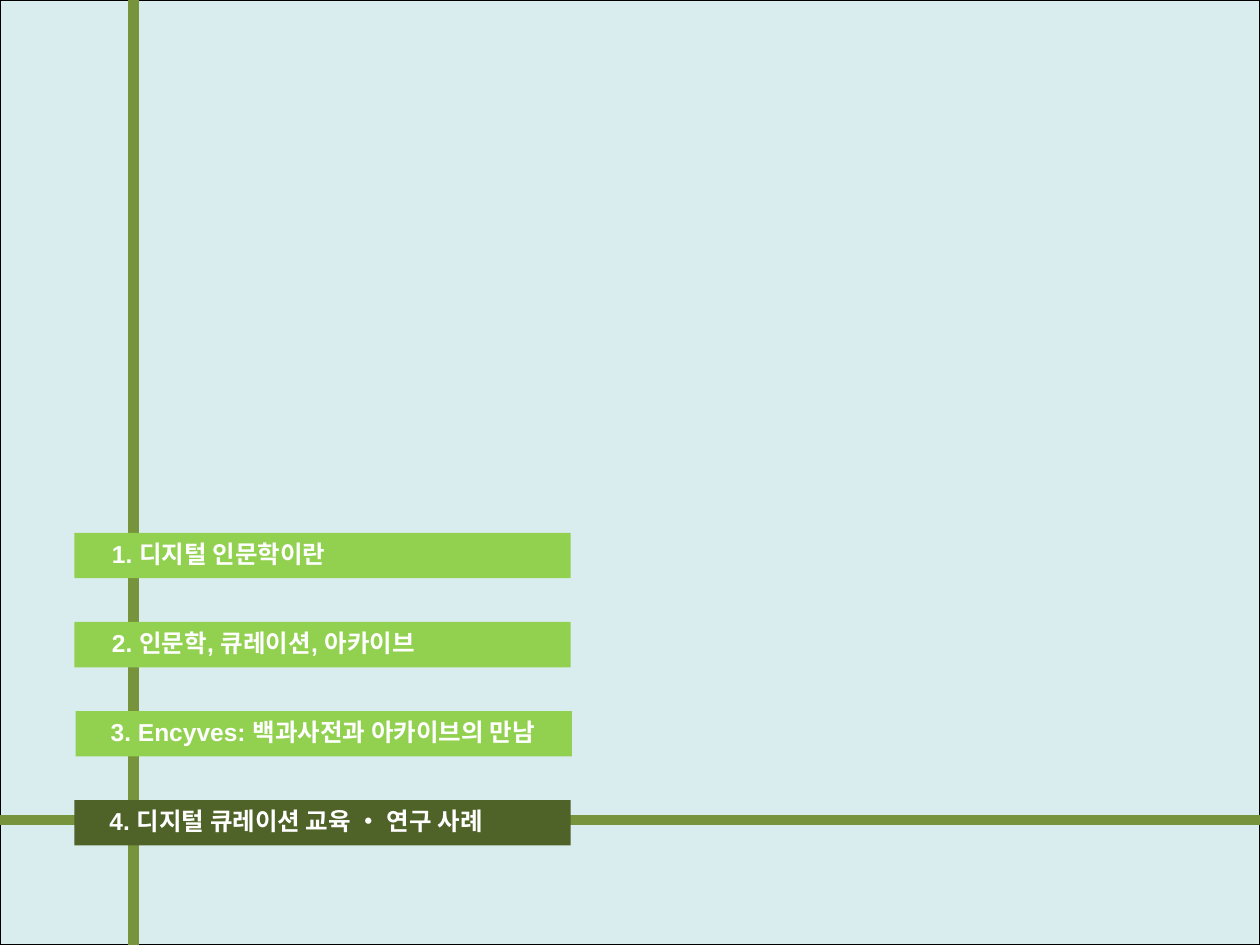
from dataclasses import dataclass

from lxml import etree
from pptx import Presentation
from pptx.dml.color import RGBColor
from pptx.enum.shapes import MSO_CONNECTOR, MSO_SHAPE
from pptx.oxml.ns import qn
from pptx.util import Inches, Pt

RECTANGLE = MSO_SHAPE.RECTANGLE
STRAIGHT = MSO_CONNECTOR.STRAIGHT


@dataclass(frozen=True)
class Theme:
    background: RGBColor = RGBColor.from_string("D9EDEF")
    border: RGBColor = RGBColor.from_string("000000")
    rule: RGBColor = RGBColor.from_string("77933C")
    bar: RGBColor = RGBColor.from_string("92D050")
    active_bar: RGBColor = RGBColor.from_string("4F6228")
    text: RGBColor = RGBColor.from_string("FFFFFF")
    font: str = "Arial"
    text_size: float = 14
    border_width: float = 0.75
    rule_width: float = 6


THEME = Theme()
WIDTH, HEIGHT = 10, 7.5
RULES = [
    (1.06, HEIGHT, 1.06, 0),
    (0, 6.51, WIDTH, 6.51),
]
CHAPTERS = [
    {"title": "1. 디지털 인문학이란", "bar_left": 0.59, "text_left": 0.79, "text_width": 3.35, "fill": THEME.bar},
    {"title": "2. 인문학, 큐레이션, 아카이브", "bar_left": 0.59, "text_left": 0.79, "text_width": 3.19, "fill": THEME.bar},
    {"title": "3. Encyves: 백과사전과 아카이브의 만남", "bar_left": 0.6, "text_left": 0.78, "text_width": 3.91, "fill": THEME.bar},
    {"title": "4. 디지털 큐레이션 교육 • 연구 사례", "bar_left": 0.59, "text_left": 0.77, "text_width": 3.75, "fill": THEME.active_bar},
]
FIRST_TOP, LAST_TOP = 4.23, 6.35
BAR_WIDTH, BAR_HEIGHT, TEXT_HEIGHT = 3.94, 0.36, 0.34
FONT_FORMAT = {"name": THEME.font, "size": Pt(THEME.text_size), "bold": True}


def add_rectangle(page, left, top, width, height, fill):
    box = page.shapes.add_shape(RECTANGLE, Inches(left), Inches(top), Inches(width), Inches(height))
    box.shadow.inherit = False
    box.fill.solid()
    box.fill.fore_color.rgb = fill
    box.line.fill.background()
    return box


def add_background(page):
    box = add_rectangle(page, 0, 0, WIDTH, HEIGHT, THEME.background)
    box.line.color.rgb = THEME.border
    box.line.width = Pt(THEME.border_width)


def add_rule(page, ends):
    rule = page.shapes.add_connector(STRAIGHT, *(Inches(value) for value in ends))
    rule.line.color.rgb = THEME.rule
    rule.line.width = Pt(THEME.rule_width)
    etree.SubElement(rule._element.spPr, qn("a:effectLst"))


def add_chapter(page, chapter, top):
    add_rectangle(page, chapter["bar_left"], top, BAR_WIDTH, BAR_HEIGHT, chapter["fill"])
    box = page.shapes.add_textbox(
        Inches(chapter["text_left"]), Inches(top), Inches(chapter["text_width"]), Inches(TEXT_HEIGHT)
    )
    box.text_frame.word_wrap = True
    span = box.text_frame.paragraphs[0].add_run()
    span.text = chapter["title"]
    for name, value in FONT_FORMAT.items():
        setattr(span.font, name, value)
    span.font.color.rgb = THEME.text


def main():
    """Build the chapter overview slide with the fourth chapter highlighted."""
    deck = Presentation()
    deck.slide_width, deck.slide_height = Inches(WIDTH), Inches(HEIGHT)
    page = deck.slides.add_slide(deck.slide_layouts[6])
    add_background(page)
    for ends in RULES:
        add_rule(page, ends)
    pitch = (LAST_TOP - FIRST_TOP) / (len(CHAPTERS) - 1)
    for index, chapter in enumerate(CHAPTERS):
        add_chapter(page, chapter, FIRST_TOP + index * pitch)
    deck.save("out.pptx")


if __name__ == "__main__":
    main()
